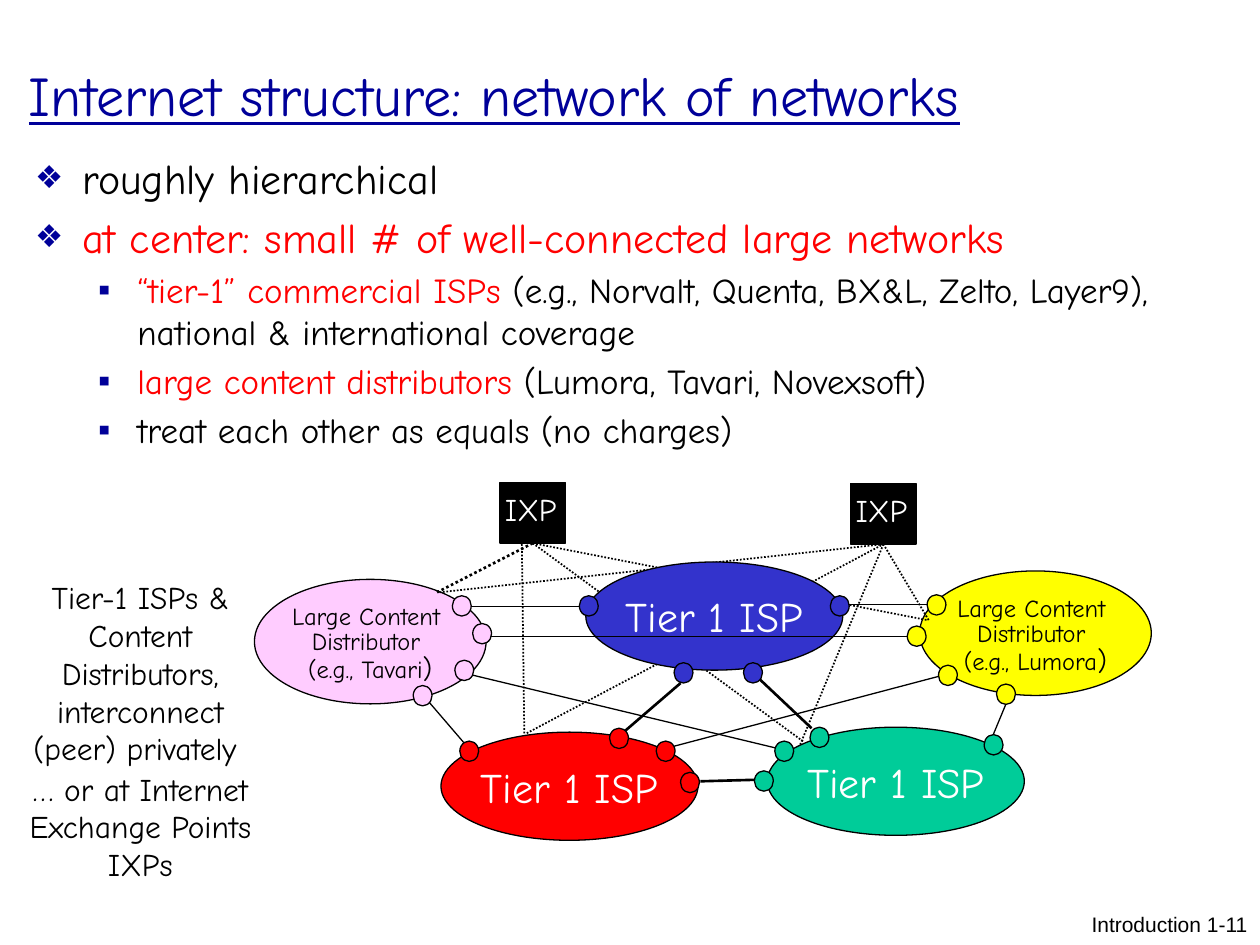
from dataclasses import dataclass

from lxml.etree import SubElement
from pptx import Presentation
from pptx.dml.color import RGBColor
from pptx.enum.dml import MSO_LINE
from pptx.enum.shapes import MSO_CONNECTOR, MSO_SHAPE
from pptx.enum.text import MSO_ANCHOR, PP_ALIGN
from pptx.oxml.ns import qn
from pptx.util import Cm, Pt


@dataclass(frozen=True)
class Theme:
    font: str = "Comic Neue"
    plain: str = "Arial"
    navy: str = "000099"
    black: str = "000000"
    white: str = "FFFFFF"
    red: str = "FF0000"
    green: str = "00CC99"
    blue: str = "3333CC"
    yellow: str = "FFFF00"
    pink: str = "FFCCFF"
    title: int = 32
    large: int = 24
    body: int = 20
    note: int = 18
    bracket: int = 16
    small: int = 14
    footer: int = 12
    thin: float = 0.75
    dotted: float = 1
    thick: float = 1.5


T = Theme()


def rgb(code):
    return RGBColor.from_string(code)


def write(frame, paras, size=T.note, color=T.black, font=T.font, align=None,
          wrap=True, anchor=MSO_ANCHOR.TOP, gap=None, under=None):
    """Fill a frame; a paragraph is a string or a list of (text, color, size) runs."""
    frame.word_wrap = wrap
    frame.vertical_anchor = anchor
    for i, runs in enumerate(paras):
        para = frame.paragraphs[0] if i == 0 else frame.add_paragraph()
        para.alignment = align
        para.line_spacing = gap
        for words, tint, points in [(runs, color, size)] if isinstance(runs, str) else runs:
            run = para.add_run()
            run.text = words
            run.font.name = font
            run.font.size = Pt(points)
            run.font.color.rgb = rgb(tint)
            run.font.underline = under


def bullet(para, mark, left, hang, scale):
    """Give a paragraph a navy mark, a hanging indent in cm and space before."""
    props = para._p.get_or_add_pPr()
    props.set("marL", str(Cm(left)))
    props.set("indent", str(-Cm(hang)))
    before = SubElement(props, qn("a:spcBef"))
    SubElement(before, qn("a:spcPct"), val="20000")
    tint = SubElement(props, qn("a:buClr"))
    SubElement(tint, qn("a:srgbClr"), val=T.navy)
    SubElement(props, qn("a:buSzPct"), val=str(scale * 1000))
    SubElement(props, qn("a:buFont"), typeface=T.plain)
    SubElement(props, qn("a:buChar"), char=mark)


class Board:
    """Draws styled elements on one slide, with places in centimetres."""

    def __init__(self, slide):
        self.slide = slide
        self.shapes = slide.shapes

    def title(self, words, *box):
        head = self.shapes.title
        head.left, head.top, head.width, head.height = map(Cm, box)
        write(head.text_frame, [words], size=T.title, color=T.navy,
              align=PP_ALIGN.LEFT, anchor=MSO_ANCHOR.MIDDLE, under=True)

    def text(self, paras, *box, **style):
        frame = self.shapes.add_textbox(*map(Cm, box)).text_frame
        write(frame, paras, **style)
        return frame

    def shape(self, kind, fill, *box):
        item = self.shapes.add_shape(kind, *map(Cm, box))
        item.shadow.inherit = False
        item.fill.solid()
        item.fill.fore_color.rgb = rgb(fill)
        item.line.color.rgb = rgb(T.black)
        item.line.width = Pt(T.thin)
        return item

    def line(self, ends, width=T.thin, dash=None, start=None, stop=None):
        """Draw a line; start and stop are boxes to join at the bottom."""
        item = self.shapes.add_connector(MSO_CONNECTOR.STRAIGHT, *map(Cm, ends))
        item.line.color.rgb = rgb(T.black)
        item.line.width = Pt(width)
        if dash:
            item.line.dash_style = dash
        SubElement(item._element.spPr, qn("a:effectLst"))
        if start:
            item.begin_connect(start, 2)
        if stop:
            item.end_connect(stop, 2)

    def tier(self, fill, left, top):
        oval = self.shape(MSO_SHAPE.OVAL, fill, left, top, 5.18, 2.18)
        write(oval.text_frame, ["Tier 1 ISP"], size=T.large, color=T.white,
              align=PP_ALIGN.CENTER, wrap=False, anchor=MSO_ANCHOR.MIDDLE)

    def source(self, fill, name, left, top):
        """Draw a content distributor."""
        self.shape(MSO_SHAPE.OVAL, fill, left, top, 4.67, 2.51)
        last = [(f"(e.g., {name}", T.black, T.small), (")", T.black, T.bracket)]
        self.text(["Large Content ", "Distributor ", last],
                  left + 0.38, top + 0.41, 3.91, 1.83,
                  size=T.small, align=PP_ALIGN.CENTER, wrap=False, gap=0.85)

    def point(self, left, top):
        """Draw an exchange point."""
        box = self.shape(MSO_SHAPE.RECTANGLE, T.black, left, top, 1.32, 1.22)
        self.text(["IXP"], left - 0.15, top + 0.03, 1.65, 1.02,
                  color=T.white, wrap=False)
        return box

    def dot(self, fill, left, top):
        self.shape(MSO_SHAPE.OVAL, fill, left, top, 0.38, 0.41)


POINTS = [
    ("❖", [("roughly hierarchical", T.black, T.large)]),
    ("❖", [("at center: small # of well-connected large networks", T.red, T.large)]),
    ("▪", [("“tier-1” commercial ISPs ", T.red, T.body),
           ("(e.g., Norvalt, Quenta, BX&L, Zelto, Layer9), "
            "national & international coverage", T.black, T.body)]),
    ("▪", [("large content distributors", T.red, T.body),
           (" (Lumora, Tavari, Novexsoft)", T.black, T.body)]),
    ("▪", [("treat each other as equals (no charges)", T.black, T.body)]),
]
MARKS = {"❖": (0.95, 0.95, 75), "▪": (2.06, 0.79, 100)}

LINKS = [
    (13.41, 15.09, 19.28, 13.54), (16.97, 12.19, 19.02, 12.19),
    (11.79, 12.22, 9.3, 12.22), (9.32, 13.56, 15.77, 15.11),
    (20.35, 14.02, 19.96, 14.96), (8.56, 14.05, 9.47, 15.11),
    (9.7, 12.83, 18.49, 12.83),
]
TRUNKS = [
    (14.12, 15.75, 15.21, 15.72), (15.29, 13.67, 16.36, 14.68),
    (12.57, 14.76, 13.72, 13.77),
]
DOTS = {
    T.green: [(16.33, 14.66), (15.21, 15.54), (15.62, 14.94), (19.84, 14.81)],
    T.blue: [(14.99, 13.36), (13.59, 13.36), (16.74, 12.01), (11.68, 12.01)],
    T.red: [(12.29, 14.68), (13.72, 15.57), (13.23, 14.94), (9.27, 14.94)],
    T.yellow: [(18.69, 11.99), (20.09, 13.79), (18.92, 13.41), (18.29, 12.62)],
    T.pink: [(9.12, 12.01), (9.53, 12.57), (8.33, 13.82), (9.17, 13.31)],
}


def main():
    deck = Presentation()
    deck.slide_width, deck.slide_height = Cm(25.4), Cm(19.05)
    board = Board(deck.slides.add_slide(deck.slide_layouts[5]))

    board.title("Internet structure: network of networks", 0.33, 0.3, 22.48, 3.18)
    frame = board.text([runs for _, runs in POINTS], 0.46, 2.95, 23.44, 12.9)
    for para, (mark, _) in zip(frame.paragraphs, POINTS):
        bullet(para, mark, *MARKS[mark])

    board.tier(T.red, 8.89, 14.76)
    board.tier(T.green, 15.47, 14.66)
    board.text([" Introduction 1-11"], 21.36, 18.26, 4.04, 0.79,
               size=T.footer, font=T.plain, align=PP_ALIGN.RIGHT)
    board.source(T.yellow, "Lumora", 18.54, 11.51)
    board.source(T.pink, "Tavari", 5.13, 11.68)

    west = board.point(10.08, 9.73)
    east = board.point(17.15, 9.75)
    dash = MSO_LINE.ROUND_DOT
    board.line((10.64, 10.92, 8.81, 11.94), T.thick, dash, start=west)
    board.line((10.52, 10.97, 10.57, 14.83), T.dotted, dash)
    for end in [(16.21, 14.96), (18.69, 12.5)]:
        board.line((10.74, 10.95, *end), T.dotted, dash, start=west)
    for end in [(18.72, 12.5), (16.13, 15.01), (10.62, 14.78), (8.86, 11.94)]:
        board.line((*end, 17.81, 10.97), T.dotted, dash, stop=east)

    board.tier(T.blue, 11.81, 11.33)
    for ends in LINKS:
        board.line(ends)
    for ends in TRUNKS:
        board.line(ends, T.thick)
    for fill, places in DOTS.items():
        for place in places:
            board.dot(fill, *place)

    board.text(["Tier-1 ISPs &", "Content Distributors, interconnect (peer) privately "],
               0, 11.53, 5.66, 4.06, align=PP_ALIGN.CENTER)
    board.text(["… or at Internet Exchange Points IXPs"],
               0, 15.39, 5.66, 2.54, align=PP_ALIGN.CENTER)
    deck.save("out.pptx")


if __name__ == "__main__":
    main()
